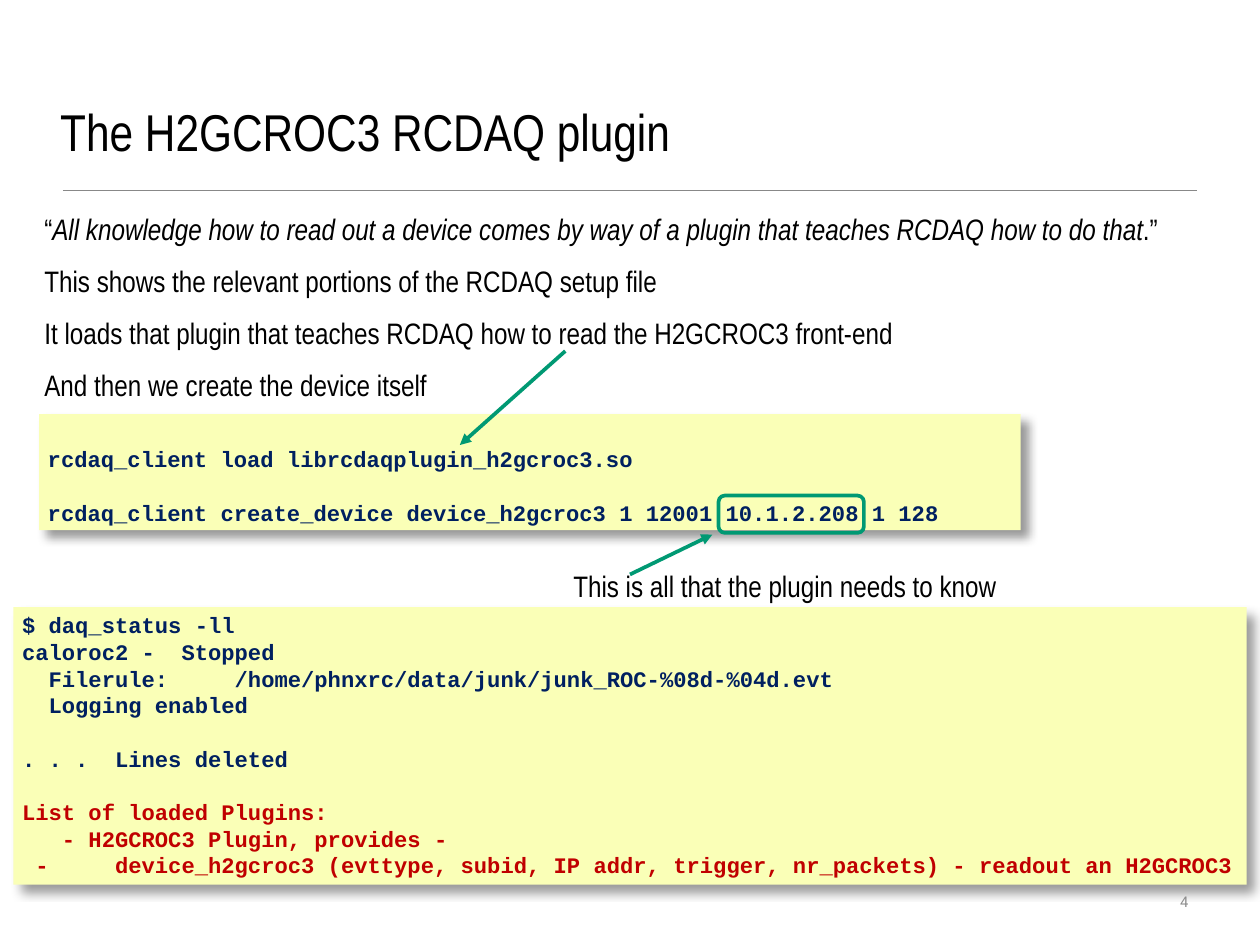
from dataclasses import dataclass
from typing import NamedTuple

from lxml.etree import SubElement
from pptx import Presentation
from pptx.dml.color import RGBColor
from pptx.enum.shapes import MSO_CONNECTOR, MSO_SHAPE
from pptx.enum.text import MSO_ANCHOR, PP_ALIGN
from pptx.oxml.ns import qn
from pptx.util import Emu, Pt

PX = 9144  # 100 px to the inch


@dataclass(frozen=True)
class Theme:
    text: str = "000000"
    muted: str = "8C8C8C"
    rule: str = "888888"
    accent: str = "009973"
    code: str = "002060"
    code_hot: str = "C00000"
    code_fill: str = "FAFFB7"
    sans: str = "Arial Narrow"
    mono: str = "Courier New"
    number: str = "Roboto"
    title_size: int = 42
    body_size: int = 24
    code_size: int = 18
    number_size: int = 12
    body_gap: float = 13.6
    body_pitch: float = 28.7
    code_pitch: float = 21.67


T = Theme()


class Box(NamedTuple):
    x: int
    y: int
    w: int
    h: int


class Line(NamedTuple):
    x1: int
    y1: int
    x2: int
    y2: int
    color: str
    width: int
    arrow: bool = True


class Para(NamedTuple):
    text: str
    color: str = T.text
    gap: float = 0  # space before, in points
    italic: str = ""  # part of the text set in italics


class Style(NamedTuple):
    font: str
    size: int
    bold: bool = False
    pitch: float | None = None
    inset: tuple[int, int] = (6, 6)
    anchor: MSO_ANCHOR = MSO_ANCHOR.TOP
    align: PP_ALIGN = PP_ALIGN.LEFT


class TextBlock(NamedTuple):
    box: Box
    style: Style
    paras: list[Para]


def px(n: int) -> Emu:
    return Emu(n * PX)


def rgb(color: str) -> RGBColor:
    return RGBColor.from_string(color)


def fill_text(tf, style: Style, paras: list[Para]) -> None:
    tf.word_wrap = True
    tf.vertical_anchor = style.anchor
    tf.margin_left = tf.margin_right = px(style.inset[0])
    tf.margin_top = tf.margin_bottom = px(style.inset[1])
    for i, para in enumerate(paras):
        p = tf.paragraphs[0] if i == 0 else tf.add_paragraph()
        p.alignment = style.align
        p.space_before = Pt(para.gap if i else 0)
        if style.pitch:
            p.line_spacing = Pt(style.pitch)
        p.font.name, p.font.size = style.font, Pt(style.size)
        p.font.bold = style.bold
        p.font.color.rgb = rgb(para.color)
        parts = para.text.partition(para.italic) if para.italic else (para.text,)
        for part in parts:
            r = p.add_run()
            r.text = part
            if part == para.italic:
                r.font.italic = True


def add_text(slide, block: TextBlock) -> None:
    sp = slide.shapes.add_textbox(*map(px, block.box))
    fill_text(sp.text_frame, block.style, block.paras)


def add_code(slide, block: TextBlock) -> None:
    sp = slide.shapes.add_shape(MSO_SHAPE.RECTANGLE, *map(px, block.box))
    sp.shadow.inherit = False
    sp.fill.solid()
    sp.fill.fore_color.rgb = rgb(T.code_fill)
    sp.line.fill.background()
    effects = sp._element.spPr.find(qn("a:effectLst"))
    shadow = SubElement(effects, qn("a:outerShdw"), blurRad=str(Pt(8)),
                        dist=str(Pt(8)), dir="2700000", algn="tl", rotWithShape="0")
    color = SubElement(shadow, qn("a:srgbClr"), val=T.text)
    SubElement(color, qn("a:alpha"), val="40000")
    fill_text(sp.text_frame, block.style, block.paras)


def add_frame(slide, box: Box) -> None:
    sp = slide.shapes.add_shape(MSO_SHAPE.ROUNDED_RECTANGLE, *map(px, box))
    sp.shadow.inherit = False
    sp.fill.background()
    sp.line.color.rgb = rgb(T.accent)
    sp.line.width = Pt(3)


def add_line(slide, line: Line) -> None:
    c = slide.shapes.add_connector(MSO_CONNECTOR.STRAIGHT, *map(px, line[:4]))
    c.line.color.rgb = rgb(line.color)
    c.line.width = Pt(line.width)
    if line.arrow:
        SubElement(c.line._get_or_add_ln(), qn("a:tailEnd"), type="triangle")
    SubElement(c._element.spPr, qn("a:effectLst"))


TITLE = Style(T.sans, T.title_size, anchor=MSO_ANCHOR.BOTTOM)
BODY = Style(T.sans, T.body_size, pitch=T.body_pitch)
NUMBER = Style(T.number, T.number_size, inset=(10, 5),
               anchor=MSO_ANCHOR.MIDDLE, align=PP_ALIGN.RIGHT)
CODE = Style(T.mono, T.code_size, bold=True, pitch=T.code_pitch, inset=(10, 5))

QUOTE = ("All knowledge how to read out a device comes by way of "
         "a plugin that teaches RCDAQ how to do that")

TEXTS = [
    TextBlock(Box(62, 36, 1297, 153), TITLE, [Para("The H2GCROC3 RCDAQ plugin")]),
    TextBlock(Box(44, 232, 1378, 301), BODY, [
        Para(f"“{QUOTE}.”", italic=QUOTE),
        Para("This shows the relevant portions of the RCDAQ setup file", gap=T.body_gap),
        Para("It loads that plugin that teaches RCDAQ how to read the H2GCROC3 front-end",
             gap=T.body_gap),
        Para("And then we create the device itself", gap=T.body_gap),
    ]),
    TextBlock(Box(1019, 989, 332, 57), NUMBER, [Para("4", T.muted)]),
    TextBlock(Box(641, 635, 515, 57), BODY,
              [Para("This is all that the plugin needs to know")]),
]

SETUP = TextBlock(Box(44, 467, 1108, 131), CODE._replace(anchor=MSO_ANCHOR.BOTTOM), [
    Para("rcdaq_client load librcdaqplugin_h2gcroc3.so", T.code),
    Para("rcdaq_client create_device device_h2gcroc3 1 12001 10.1.2.208 1 128",
         T.code, T.code_pitch),
])
STATUS = TextBlock(Box(15, 685, 1392, 313), CODE, [
    Para("$ daq_status -ll", T.code),
    Para("caloroc2 -  Stopped", T.code),
    Para("  Filerule:     /home/phnxrc/data/junk/junk_ROC-%08d-%04d.evt", T.code),
    Para("  Logging enabled", T.code),
    Para(". . .  Lines deleted", T.code, T.code_pitch),
    Para("List of loaded Plugins:", T.code_hot, T.code_pitch),
    Para("   - H2GCROC3 Plugin, provides -", T.code_hot),
    Para(" -     device_h2gcroc3 (evttype, subid, IP addr, trigger, nr_packets)"
         " - readout an H2GCROC3", T.code_hot),
])

ADDRESS_FRAME = Box(811, 559, 164, 42)
LINES = [
    Line(71, 215, 1351, 215, T.rule, 1, arrow=False),
    Line(711, 648, 804, 603, T.accent, 3),
    Line(638, 396, 519, 502, T.accent, 3),
]


def main() -> None:
    prs = Presentation()
    prs.slide_width, prs.slide_height = px(1422), px(1066)
    slide = prs.slides.add_slide(prs.slide_layouts[6])

    # Code panels
    for block in (SETUP, STATUS):
        add_code(slide, block)
    # Title, statements and page number
    for block in TEXTS:
        add_text(slide, block)
    # Title rule, address frame and arrows
    add_frame(slide, ADDRESS_FRAME)
    for line in LINES:
        add_line(slide, line)

    prs.save("out.pptx")


if __name__ == "__main__":
    main()
